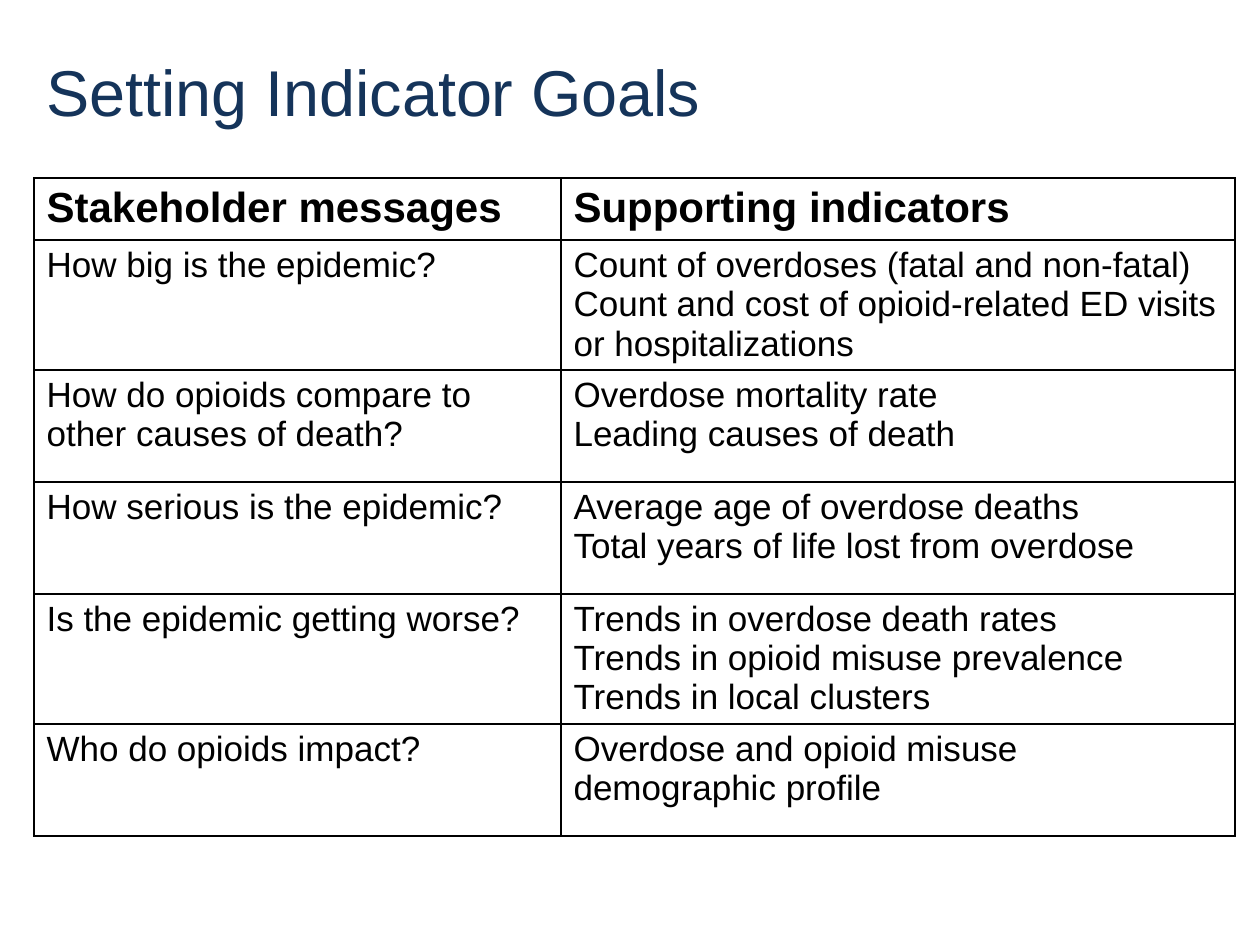
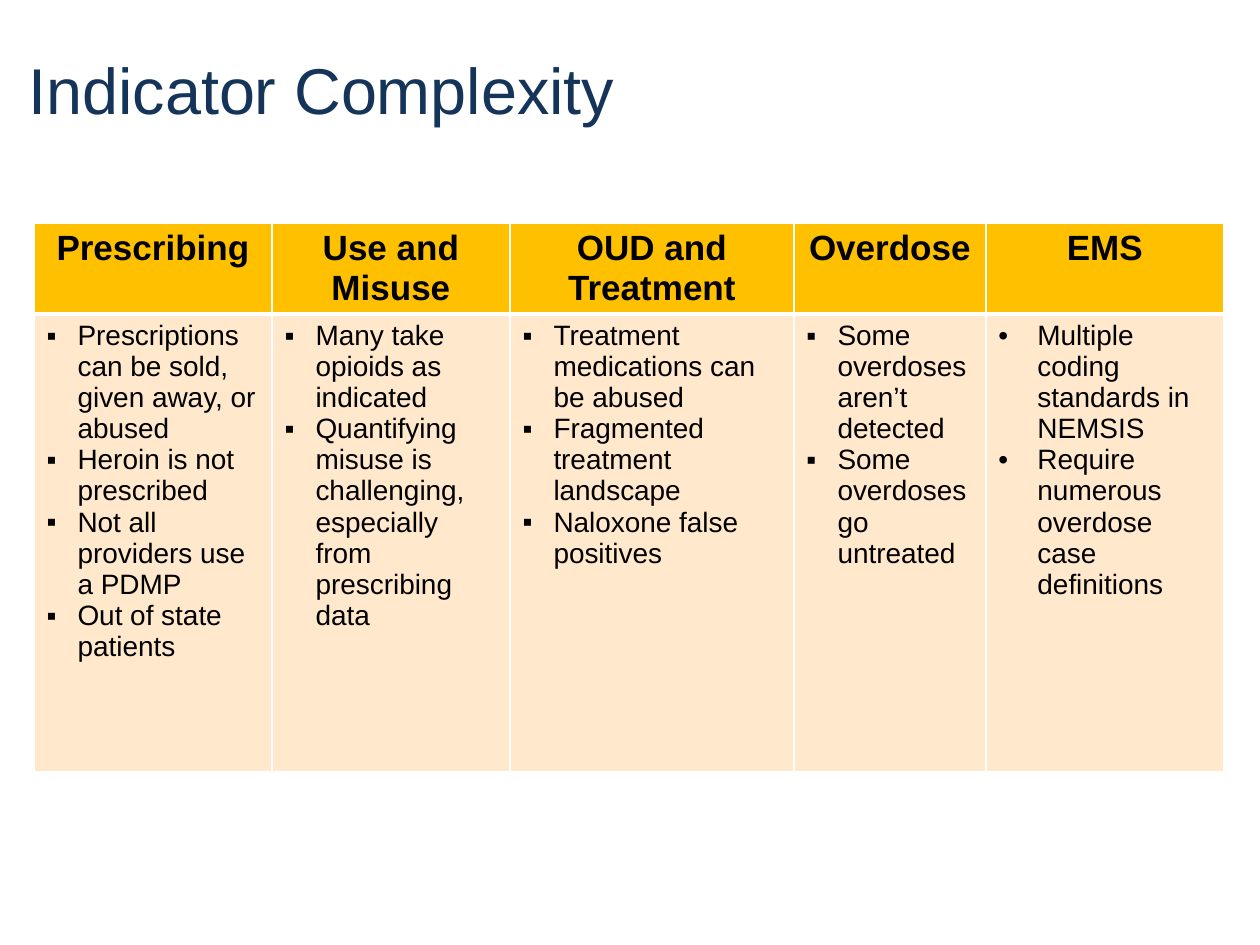
from lxml import etree
from pptx import Presentation
from pptx.dml.color import RGBColor
from pptx.enum.text import MSO_ANCHOR, MSO_AUTO_SIZE, PP_ALIGN
from pptx.oxml.ns import qn
from pptx.util import Pt

LEFT, CENTER = PP_ALIGN.LEFT, PP_ALIGN.CENTER
MIDDLE = MSO_ANCHOR.MIDDLE
NO_AUTOFIT = MSO_AUTO_SIZE.NONE
EMU_PER_PX = 914400 / 126
NAVY, BLACK, WHITE = "15345A", "000000", "FFFFFF"
GOLD, CREAM = "FFC000", "FFE8CC"
TABLE_LEFT = 34


def px(count):
    return round(count * EMU_PER_PX)


def color(value):
    return RGBColor.from_string(value)


goals = [
    (["Stakeholder messages"], ["Supporting indicators"]),
    (["How big is the epidemic?"],
     ["Count of overdoses (fatal and non-fatal)",
      "Count and cost of opioid-related ED visits or hospitalizations"]),
    (["How do opioids compare to other causes of death?"],
     ["Overdose mortality rate", "Leading causes of death"]),
    (["How serious is the epidemic?"],
     ["Average age of overdose deaths", "Total years of life lost from overdose"]),
    (["Is the epidemic getting worse?"],
     ["Trends in overdose death rates", "Trends in opioid misuse prevalence",
      "Trends in local clusters"]),
    (["Who do opioids impact?"], ["Overdose and opioid misuse demographic profile"]),
]
complexity = [
    (["Prescribing"], ["Use and Misuse"], ["OUD and Treatment"], ["Overdose"], ["EMS"]),
    (["Prescriptions can be sold, given away, or abused", "Heroin is not prescribed",
      "Not all providers use a PDMP", "Out of state patients"],
     ["Many take opioids as indicated",
      "Quantifying misuse is challenging, especially from prescribing data"],
     ["Treatment medications can be abused", "Fragmented treatment landscape",
      "Naloxone false positives"],
     ["Some overdoses aren’t detected", "Some overdoses go untreated"],
     ["Multiple coding standards in NEMSIS",
      "Require numerous overdose case definitions"]),
]
pages = [
    {"title": "Setting Indicator Goals", "title_box": (34, 35, 856, 120),
     "cells": goals, "top": 178,
     "columns": [527, 674], "rows": [62, 130, 112, 112, 130, 112],
     "sizes": (24, 20), "align": LEFT, "fills": None, "line": BLACK,
     "header_rule": 1, "bullets": None},
    {"title": "Indicator Complexity", "title_box": (16, 34, 900, 120),
     "cells": complexity, "top": 223,
     "columns": [238, 238, 284, 192, 238], "rows": [91, 458],
     "sizes": (20, 16), "align": CENTER, "fills": (GOLD, CREAM), "line": WHITE,
     "header_rule": 3, "bullets": [("▪", 31)] * 4 + [("•", 39)]},
]

deck = Presentation()
deck.slide_width, deck.slide_height = px(1260), px(945)

for content in pages:
    page = deck.slides.add_slide(deck.slide_layouts[5])
    title = page.shapes.title
    for name, value in zip(("left", "top", "width", "height"), content["title_box"]):
        setattr(title, name, px(value))
    frame = title.text_frame
    frame.text = content["title"]
    for name, value in {"auto_size": NO_AUTOFIT, "word_wrap": True,
                        "vertical_anchor": MIDDLE}.items():
        setattr(frame, name, value)
    para = frame.paragraphs[0]
    para.alignment, para.line_spacing = LEFT, 0.9
    span = para.runs[0]
    for name, value in {"name": "Arial", "size": Pt(37), "bold": False}.items():
        setattr(span.font, name, value)
    span.font.color.rgb = color(NAVY)

    columns, rows = content["columns"], content["rows"]
    table = page.shapes.add_table(
        len(rows), len(columns), px(TABLE_LEFT), px(content["top"]),
        px(sum(columns)), px(sum(rows))).table
    table.first_row = table.horz_banding = False
    for column, width in zip(table.columns, columns):
        column.width = px(width)
    for row, height in zip(table.rows, rows):
        row.height = px(height)

    for row_index, row_cells in enumerate(content["cells"]):
        header = row_index == 0
        for column_index, lines in enumerate(row_cells):
            cell = table.cell(row_index, column_index)
            if content["fills"]:
                cell.fill.solid()
                cell.fill.fore_color.rgb = color(content["fills"][min(row_index, 1)])
            else:
                cell.fill.background()

            rule = content["header_rule"]
            borders = {"lnL": 1, "lnR": 1,
                       "lnT": rule if row_index == 1 else 1,
                       "lnB": rule if header else 1}
            properties = cell._tc.get_or_add_tcPr()
            for position, (side, weight) in enumerate(borders.items()):
                border = etree.Element(qn("a:" + side), w=str(Pt(weight)))
                paint = etree.SubElement(border, qn("a:solidFill"))
                etree.SubElement(paint, qn("a:srgbClr"), val=content["line"])
                properties.insert(position, border)

            cell.text = "\n".join(lines)
            for para in cell.text_frame.paragraphs:
                para.alignment = content["align"] if header else LEFT
                if content["bullets"] and not header:
                    mark, indent = content["bullets"][column_index]
                    settings = para._p.get_or_add_pPr()
                    settings.set("marL", str(px(indent)))
                    settings.set("indent", str(-px(indent)))
                    etree.SubElement(settings, qn("a:buFont"), typeface="Arial")
                    etree.SubElement(settings, qn("a:buChar"), char=mark)
                font = para.runs[0].font
                size = content["sizes"][min(row_index, 1)]
                for name, value in {"name": "Arial", "size": Pt(size),
                                    "bold": header}.items():
                    setattr(font, name, value)
                font.color.rgb = color(BLACK)

deck.save("out.pptx")
